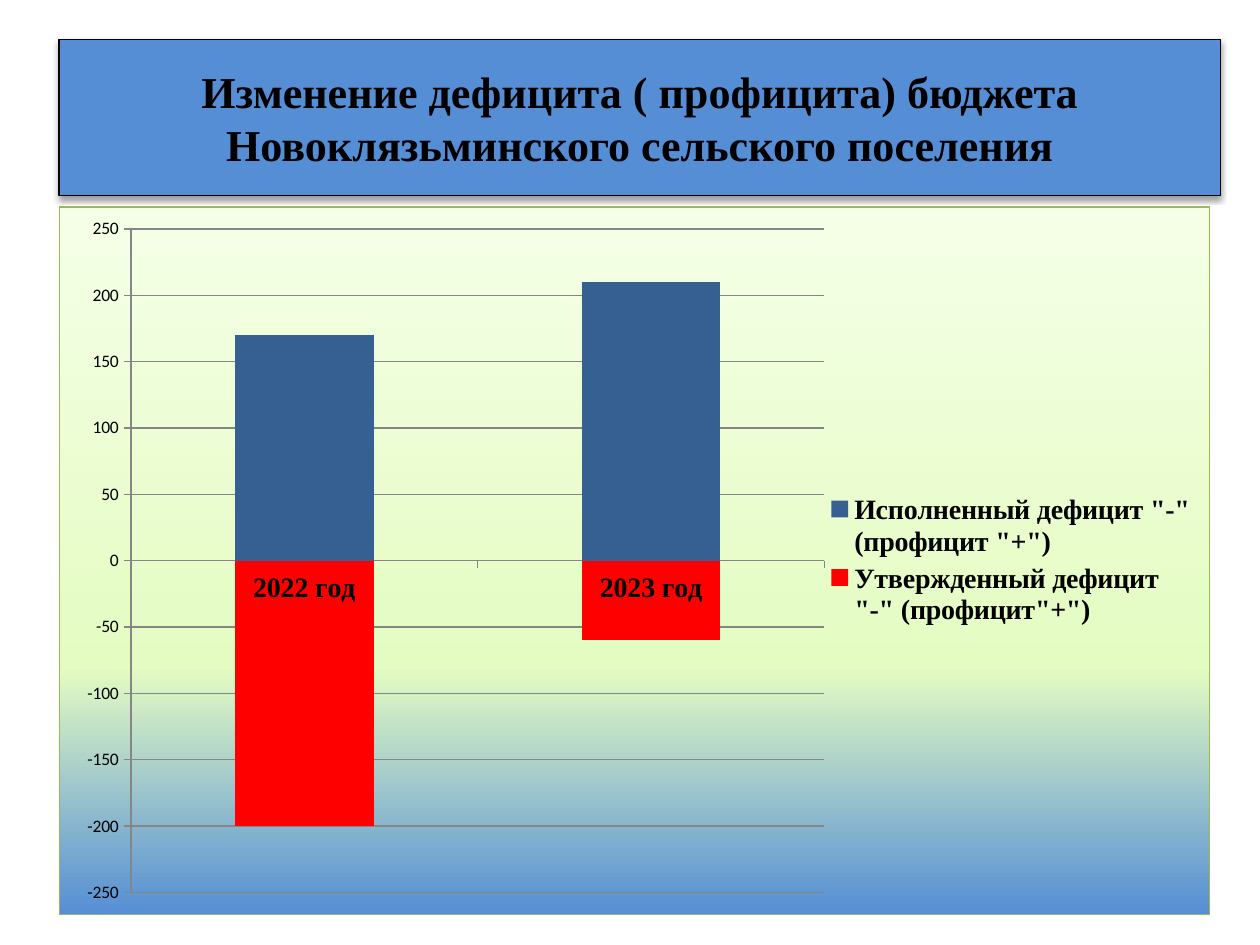
from lxml import etree
from pptx import Presentation
from pptx.chart.data import CategoryChartData
from pptx.dml.color import RGBColor
from pptx.enum.chart import XL_CHART_TYPE, XL_LEGEND_POSITION, XL_TICK_MARK
from pptx.enum.text import MSO_ANCHOR, MSO_AUTO_SIZE, PP_ALIGN
from pptx.oxml import parse_xml
from pptx.oxml.ns import nsdecls, qn
from pptx.util import Cm, Pt

STACKED = XL_CHART_TYPE.COLUMN_STACKED
LEGEND_RIGHT = XL_LEGEND_POSITION.RIGHT
TICK_OUTSIDE = XL_TICK_MARK.OUTSIDE
MIDDLE = MSO_ANCHOR.MIDDLE
NO_AUTOFIT = MSO_AUTO_SIZE.NONE
CENTER = PP_ALIGN.CENTER

COLORS = {
    "text": "000000",
    "banner": "558ED5",
    "approved": "FF0000",
    "executed": "376092",
    "grid": "868686",
    "border": "98B955",
}
BACKDROP_STOPS = [(0, "558ED5"), (35, "E4FCC2"), (100, "F5FFE7")]
SERIF = "Times New Roman"
SANS = "Calibri"
TITLE = "Изменение дефицита ( профицита) бюджета Новоклязьминского сельского поселения"
YEARS = ["2022 год", "2023 год"]
BALANCES = [
    ('Утвержденный дефицит "-" (профицит"+")', (-200, -60), "approved"),
    ('Исполненный дефицит "-" (профицит "+")', (170, 210), "executed"),
]


def rgb(role):
    """Return the palette colour for a role."""
    return RGBColor.from_string(COLORS[role])


def style_font(font, name, size, bold):
    """Set typeface, size, weight and the text colour."""
    font.name = name
    font.size = Pt(size)
    font.bold = bold
    font.color.rgb = rgb("text")


def add_banner(slide, left, top, width, height):
    """Place the title on a blue, shadowed banner."""
    banner = slide.shapes.title
    banner.left, banner.top, banner.width, banner.height = left, top, width, height
    banner.fill.solid()
    banner.fill.fore_color.rgb = rgb("banner")
    banner.line.color.rgb = rgb("text")
    banner.line.width = Pt(0.75)
    banner._element.spPr.append(parse_xml(
        f'<a:effectLst {nsdecls("a")}>'
        '<a:outerShdw blurRad="40000" dist="20000" dir="5400000" rotWithShape="0">'
        f'<a:srgbClr val="{COLORS["text"]}"><a:alpha val="38000"/></a:srgbClr>'
        '</a:outerShdw></a:effectLst>'))
    frame = banner.text_frame
    frame.word_wrap = True
    frame.auto_size = NO_AUTOFIT
    frame.vertical_anchor = MIDDLE
    heading = frame.paragraphs[0]
    heading.alignment = CENTER
    run = heading.add_run()
    run.text = TITLE
    style_font(run.font, SERIF, 25.2, True)


def paint_backdrop(chart):
    """Fill the chart area with a vertical gradient and a thin border."""
    stops = "".join(
        f'<a:gs pos="{position * 1000}"><a:srgbClr val="{color}"/></a:gs>'
        for position, color in BACKDROP_STOPS)
    backdrop = parse_xml(
        f'<c:spPr {nsdecls("c", "a")}><a:gradFill rotWithShape="1">'
        f'<a:gsLst>{stops}</a:gsLst><a:lin ang="16200000" scaled="0"/></a:gradFill>'
        f'<a:ln w="{Pt(0.75)}"><a:solidFill><a:srgbClr val="{COLORS["border"]}"/>'
        '</a:solidFill></a:ln></c:spPr>')
    chart._chartSpace.find(qn("c:chart")).addnext(backdrop)


def fix_plot_area(chart, x, y, w, h):
    """Pin the inner plot area to fractions of the chart box."""
    plot_area = chart._chartSpace.find(qn("c:chart")).find(qn("c:plotArea"))
    for old_layout in plot_area.findall(qn("c:layout")):
        plot_area.remove(old_layout)
    layout = etree.Element(qn("c:layout"))
    manual = etree.SubElement(layout, qn("c:manualLayout"))
    settings = {"layoutTarget": "inner", "xMode": "edge", "yMode": "edge",
                "x": x, "y": y, "w": w, "h": h}
    for tag, value in settings.items():
        etree.SubElement(manual, qn(f"c:{tag}")).set("val", str(value))
    plot_area.insert(0, layout)


def add_balance_chart(slide, left, top, width, height):
    """Place the stacked chart of approved and executed balances."""
    balances = CategoryChartData(number_format="General")
    balances.categories = YEARS
    for name, values, _ in BALANCES:
        balances.add_series(name, values)
    chart = slide.shapes.add_chart(STACKED, left, top, width, height, balances).chart
    chart.has_title = False
    style_font(chart.font, SANS, 10, False)
    paint_backdrop(chart)
    fix_plot_area(chart, 0.062, 0.031, 0.603, 0.938)

    columns = chart.plots[0]
    columns.gap_width = 150
    columns.overlap = 100
    columns.vary_by_categories = False
    for series, (_, _, role) in zip(columns.series, BALANCES):
        series.invert_if_negative = False
        series.format.fill.solid()
        series.format.fill.fore_color.rgb = rgb(role)

    amounts = chart.value_axis
    amounts.minimum_scale, amounts.maximum_scale = -250, 250
    amounts.major_unit = 50
    amounts.has_major_gridlines = True
    for axis in (chart.category_axis, amounts):
        axis.major_tick_mark = TICK_OUTSIDE
        axis.format.line.color.rgb = rgb("grid")
    amounts.major_gridlines.format.line.color.rgb = rgb("grid")
    style_font(chart.category_axis.tick_labels.font, SERIF, 16, True)

    chart.has_legend = True
    chart.legend.position = LEGEND_RIGHT
    chart.legend.include_in_layout = False
    style_font(chart.legend.font, SERIF, 16, True)


def main():
    """Build the slide and save it."""
    deck = Presentation()
    deck.slide_width, deck.slide_height = Cm(25.4), Cm(19.05)
    slide = deck.slides.add_slide(deck.slide_layouts[5])
    add_banner(slide, Cm(1.19), Cm(0.79), Cm(23.42), Cm(3.15))
    add_balance_chart(slide, Cm(1.19), Cm(4.16), Cm(23.21), Cm(14.29))
    deck.save("out.pptx")


if __name__ == "__main__":
    main()
